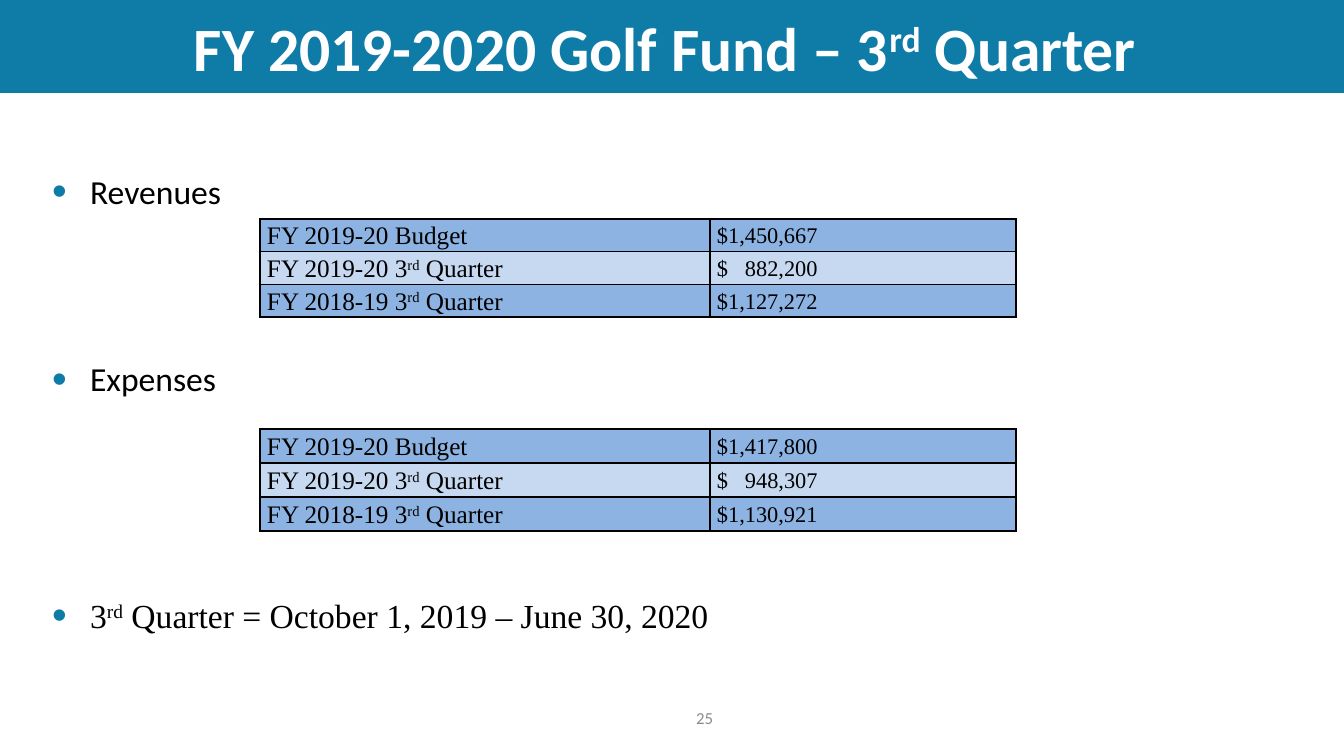
from lxml import etree
from pptx import Presentation
from pptx.dml.color import RGBColor
from pptx.enum.text import MSO_ANCHOR as ANCHOR, MSO_AUTO_SIZE as AUTO, PP_ALIGN as ALIGN
from pptx.oxml import parse_xml
from pptx.oxml.ns import nsdecls, qn
from pptx.util import Emu, Pt

TEAL = RGBColor(0x0F, 0x7C, 0xA7)
WHITE = RGBColor(0xFF, 0xFF, 0xFF)
BLACK = RGBColor(0, 0, 0)
GREY = RGBColor(0x8C, 0x8C, 0x8C)
BLUE = RGBColor(0x8D, 0xB3, 0xE2)
PALE = RGBColor(0xC6, 0xD9, 0xF1)
SANS, SERIF = "Calibri", "Times New Roman"


def px(n):
    return Emu(round(n * 914400 / 100.8))


def write(p, text, size, name, color, bold=False):
    for part in filter(None, text.partition("rd")):
        r = p.add_run()
        r.text = part
        r.font.size, r.font.name, r.font.bold = Pt(size), name, bold
        r.font.color.rgb = color
        if part == "rd":
            r.font._element.set("baseline", "30000")


prs = Presentation()
prs.slide_width, prs.slide_height = px(1344), px(756)
slide = prs.slides.add_slide(prs.slide_layouts[1])

title, body = slide.placeholders
title.left, title.top, title.width, title.height = px(0), px(0), px(1344), px(93)
title.fill.solid()
title.fill.fore_color.rgb = TEAL
tf = title.text_frame
tf.auto_size, tf.vertical_anchor, tf.margin_right = AUTO.NONE, ANCHOR.MIDDLE, px(24)
p = tf.paragraphs[0]
p.alignment = ALIGN.CENTER
write(p, "FY 2019-2020 Golf Fund – 3rd Quarter", 44, SANS, WHITE, True)

body.left, body.top, body.width, body.height = px(42), px(118), px(1235), px(562)
tf = body.text_frame
tf.auto_size, tf.vertical_anchor, tf.margin_top = AUTO.NONE, ANCHOR.TOP, px(53)
bullets = [
    ("Revenues", SANS, 0),
    ("Expenses", SANS, 105),
    ("3rd Quarter = October 1, 2019 – June 30, 2020", SERIF, 140),
]
for i, (text, name, gap) in enumerate(bullets):
    p = tf.add_paragraph() if i else tf.paragraphs[0]
    pPr = p._p.get_or_add_pPr()
    pPr.set("marL", str(px(38)))
    pPr.set("indent", str(-px(38)))
    color = etree.SubElement(pPr, qn("a:buClr"))
    etree.SubElement(color, qn("a:srgbClr"), val=str(TEAL))
    etree.SubElement(pPr, qn("a:buSzPct"), val="125000")
    etree.SubElement(pPr, qn("a:buChar"), char="•")
    p.space_before = Pt(gap)
    write(p, text, 24, name, BLACK)

number = slide.shapes.add_textbox(px(622), px(698), px(101), px(40))
tf = number.text_frame
tf.word_wrap, tf.vertical_anchor = True, ANCHOR.MIDDLE
p = tf.paragraphs[0]
p.alignment = ALIGN.RIGHT
write(p, "25", 12, SANS, GREY)

labels = ["FY 2019-20 Budget", "FY 2019-20 3rd Quarter", "FY 2018-19 3rd Quarter"]
tables = [
    (219, 31, ["$1,450,667", "$\t882,200", "$1,127,272"]),
    (429, 34, ["$1,417,800", "$\t948,307", "$1,130,921"]),
]
for top, row_height, amounts in tables:
    frame = slide.shapes.add_table(3, 2, px(260), px(top), px(756), px(3 * row_height))
    table = frame.table
    table.first_row = table.horz_banding = False
    table.columns[0].width, table.columns[1].width = px(450), px(306)
    for i, row in enumerate(zip(labels, amounts)):
        table.rows[i].height = px(row_height)
        for j, text in enumerate(row):
            cell = table.cell(i, j)
            cell.margin_left = cell.margin_right = px(7)
            cell.margin_top = cell.margin_bottom = 0
            cell.vertical_anchor = ANCHOR.MIDDLE
            tcPr = cell._tc.get_or_add_tcPr()
            for side in "LRTB":
                tcPr.append(parse_xml(
                    f'<a:ln{side} {nsdecls("a")} w="12700"><a:solidFill>'
                    f'<a:srgbClr val="{BLACK}"/></a:solidFill></a:ln{side}>'))
            cell.fill.solid()
            cell.fill.fore_color.rgb = PALE if i == 1 else BLUE
            p = cell.text_frame.paragraphs[0]
            if "\t" in text:
                tabs = etree.SubElement(p._p.get_or_add_pPr(), qn("a:tabLst"))
                etree.SubElement(tabs, qn("a:tab"), pos=str(px(28)), algn="l")
            p.alignment, p.line_spacing = ALIGN.JUSTIFY, 1.08
            write(p, text, 16 if j else 18, SERIF, BLACK)

prs.save("out.pptx")
